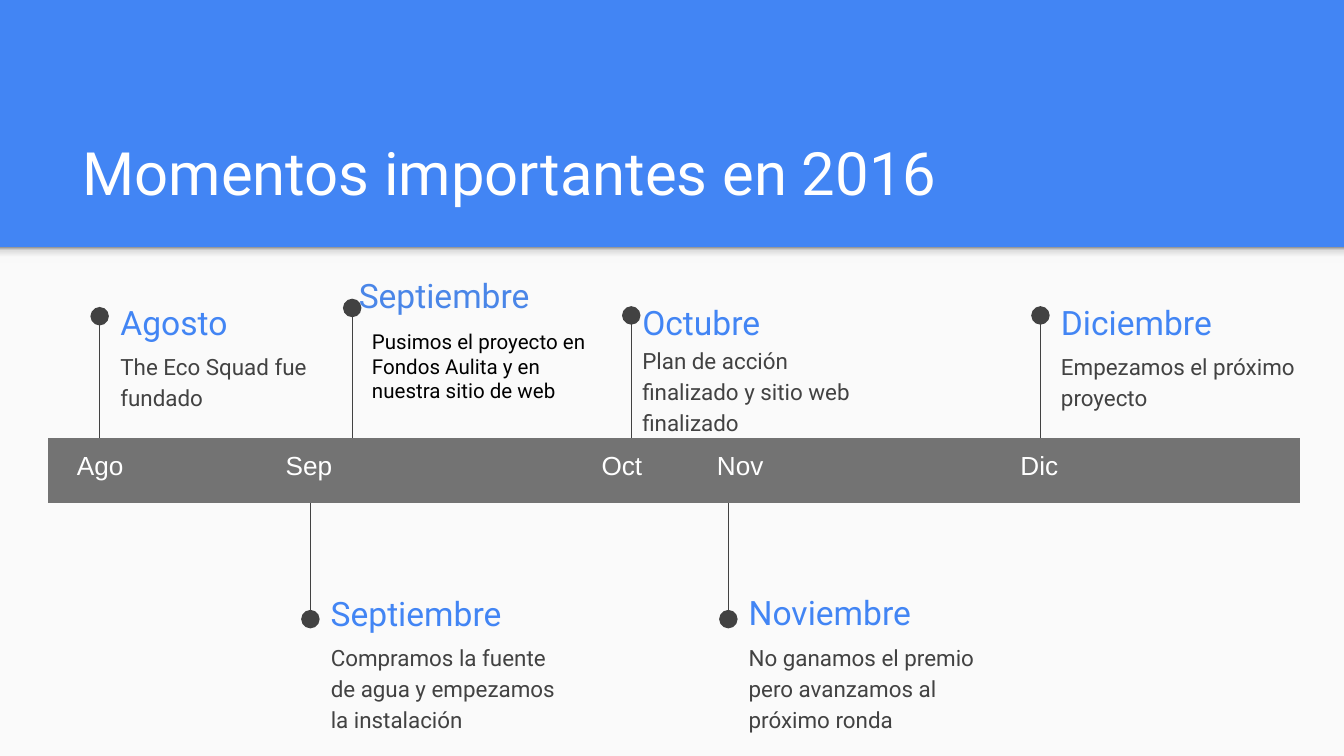
from dataclasses import dataclass

from lxml.etree import SubElement
from pptx import Presentation
from pptx.dml.color import RGBColor
from pptx.enum.shapes import MSO_CONNECTOR, MSO_SHAPE
from pptx.enum.text import MSO_ANCHOR, MSO_AUTO_SIZE, PP_ALIGN
from pptx.oxml import parse_xml
from pptx.oxml.ns import nsdecls, qn
from pptx.util import Pt

BLUE = RGBColor(0x42, 0x85, 0xF4)
SOFT_BLUE = RGBColor(0x4A, 0x86, 0xE8)
PAPER = RGBColor(0xFA, 0xFA, 0xFA)
DARK = RGBColor(0x42, 0x42, 0x42)
GRAY = RGBColor(0x73, 0x73, 0x73)
WHITE = RGBColor(0xFF, 0xFF, 0xFF)
BLACK = RGBColor(0, 0, 0)

SLIDE_WIDTH, SLIDE_HEIGHT = 720, 405
HEADER_HEIGHT = 132.5
SHADOW_STOPS = [(0, "F9F9F9"), (36, "F9F9F9"), (80, "DEDEDE"), (100, "999999")]
INSET = 7.2
BAR_LEFT, BAR_TOP, BAR_HEIGHT, COLUMN_WIDTH = 25.7, 234.7, 34.8, 55.9
COLUMN_COUNT = 12

TITLE = "Momentos importantes en 2016"
# Column: (label, shift to the right of the centre)
BAR_LABELS = {0: ("Ago", 0), 2: ("Sep", 0), 5: ("Oct", 0), 6: ("Nov", 7.8), 9: ("Dic", 0)}


@dataclass
class Event:
    month: str
    text: str
    stem_x: float
    stem_from: float
    stem_to: float
    month_box: tuple
    text_box: tuple
    month_color: RGBColor = BLUE
    month_anchor: MSO_ANCHOR = MSO_ANCHOR.MIDDLE
    text_color: RGBColor = DARK
    text_size: float = 12
    line_spacing: float = 1.15
    space_after: float = 16


EVENTS = [
    Event("Agosto", "The Eco Squad fue fundado", 53.4, 235, 169.4,
          (57.4, 157, 142.6, 31), (57.4, 180, 142.6, 45.4)),
    Event("Septiembre", "Compramos la fuente de agua y empezamos la instalación",
          166.3, 265.7, 331.7, (170.1, 313.2, 163.4, 31), (170.1, 335.8, 142.6, 60.5)),
    Event("Octubre", "Plan de acción finalizado y sitio web finalizado",
          338.2, 234.7, 169, (337, 157, 142.6, 31), (337, 176.8, 142.6, 45.4)),
    Event("Noviembre", "No ganamos el premio pero avanzamos al próximo ronda",
          390.2, 265.7, 331.7, (394, 312.6, 163.4, 31), (394, 335.8, 146.9, 45.4)),
    Event("Diciembre", "Empezamos el próximo proyecto", 557.4, 234.7, 169,
          (561.3, 157, 159.1, 31), (561.3, 180, 142.6, 45.4)),
    Event("Septiembre", "Pusimos el proyecto en Fondos Aulita y en nuestra sitio de web",
          188.7, 236, 165, (185.1, 140, 151.9, 28.8), (192.2, 169, 141.1, 63.4),
          SOFT_BLUE, MSO_ANCHOR.TOP, BLACK, 11, 1, 0),
]


def points(*values):
    return [Pt(value) for value in values]


def set_insets(target):
    target.margin_left = target.margin_right = Pt(INSET)
    target.margin_top = target.margin_bottom = Pt(INSET)


def format_text(paragraph, size, color, font="Roboto"):
    for run in paragraph.runs:
        run.font.name = font
        run.font.size = Pt(size)
        run.font.color.rgb = color


def add_text(slide, box, text, size, color, anchor=MSO_ANCHOR.TOP, spacing=1, after=0):
    frame = slide.shapes.add_textbox(*points(*box)).text_frame
    frame.word_wrap = True
    frame.vertical_anchor = anchor
    set_insets(frame)
    frame.text = text
    paragraph = frame.paragraphs[0]
    paragraph.line_spacing = spacing
    paragraph.space_after = Pt(after)
    format_text(paragraph, size, color)


def add_band(slide, height):
    """Add a full-width rectangle that starts where the header ends."""
    band = slide.shapes.add_shape(
        MSO_SHAPE.RECTANGLE, *points(0, HEADER_HEIGHT, SLIDE_WIDTH, height))
    band.shadow.inherit = False
    band.line.fill.background()
    return band


def add_background(slide):
    slide.background.fill.solid()
    slide.background.fill.fore_color.rgb = BLUE
    panel = add_band(slide, SLIDE_HEIGHT - HEADER_HEIGHT)
    panel.fill.solid()
    panel.fill.fore_color.rgb = PAPER
    edge = add_band(slide, 8.6)
    stops = "".join(f'<a:gs pos="{position * 1000}"><a:srgbClr val="{color}"/></a:gs>'
                    for position, color in SHADOW_STOPS)
    edge.element.spPr.find(qn("a:prstGeom")).addnext(parse_xml(
        f'<a:gradFill {nsdecls("a")}><a:gsLst>{stops}</a:gsLst>'
        '<a:lin ang="16200000" scaled="0"/></a:gradFill>'))


def format_title(title):
    title.left, title.top, title.width, title.height = points(37, 57.8, 647.3, 60.5)
    frame = title.text_frame
    frame.text = TITLE
    frame.auto_size = MSO_AUTO_SIZE.NONE
    frame.vertical_anchor = MSO_ANCHOR.BOTTOM
    set_insets(frame)
    paragraph = frame.paragraphs[0]
    paragraph.alignment = PP_ALIGN.LEFT
    paragraph.space_after = Pt(4)
    format_text(paragraph, 32, WHITE)


def add_stem(slide, x, start, end):
    """Add a vertical line with a dot at its end."""
    stem = slide.shapes.add_connector(MSO_CONNECTOR.STRAIGHT, *points(x, start, x, end))
    stem.line.color.rgb = DARK
    stem.line.width = Pt(0.75)
    line = stem.element.spPr.find(qn("a:ln"))
    SubElement(line, qn("a:tailEnd"), type="oval", w="lg", len="lg")
    SubElement(stem.element.spPr, qn("a:effectLst"))


def remove_borders(cell):
    properties = cell._tc.get_or_add_tcPr()
    for index, side in enumerate(("lnL", "lnR", "lnT", "lnB")):
        properties.insert(index, parse_xml(
            f'<a:{side} {nsdecls("a")} w="0"><a:noFill/></a:{side}>'))


def add_month_bar(slide):
    table = slide.shapes.add_table(1, COLUMN_COUNT, *points(
        BAR_LEFT, BAR_TOP, COLUMN_WIDTH * COLUMN_COUNT, BAR_HEIGHT)).table
    for index, cell in enumerate(table.rows[0].cells):
        cell.fill.solid()
        cell.fill.fore_color.rgb = GRAY
        remove_borders(cell)
        if index in BAR_LABELS:
            label, shift = BAR_LABELS[index]
            set_insets(cell)
            cell.margin_left = Pt(INSET + shift)
            cell.margin_right = Pt(max(INSET - shift, 0))
            cell.text = label
            paragraph = cell.text_frame.paragraphs[0]
            paragraph.alignment = PP_ALIGN.CENTER
            format_text(paragraph, 14, WHITE, "Arial")


def main():
    presentation = Presentation()
    presentation.slide_width, presentation.slide_height = points(SLIDE_WIDTH, SLIDE_HEIGHT)
    slide = presentation.slides.add_slide(presentation.slide_layouts[5])
    add_background(slide)
    format_title(slide.shapes.title)
    for event in EVENTS:
        add_stem(slide, event.stem_x, event.stem_from, event.stem_to)
        add_text(slide, event.month_box, event.month, 18, event.month_color,
                 event.month_anchor)
        add_text(slide, event.text_box, event.text, event.text_size, event.text_color,
                 spacing=event.line_spacing, after=event.space_after)
    add_month_bar(slide)
    presentation.save("out.pptx")


if __name__ == "__main__":
    main()
